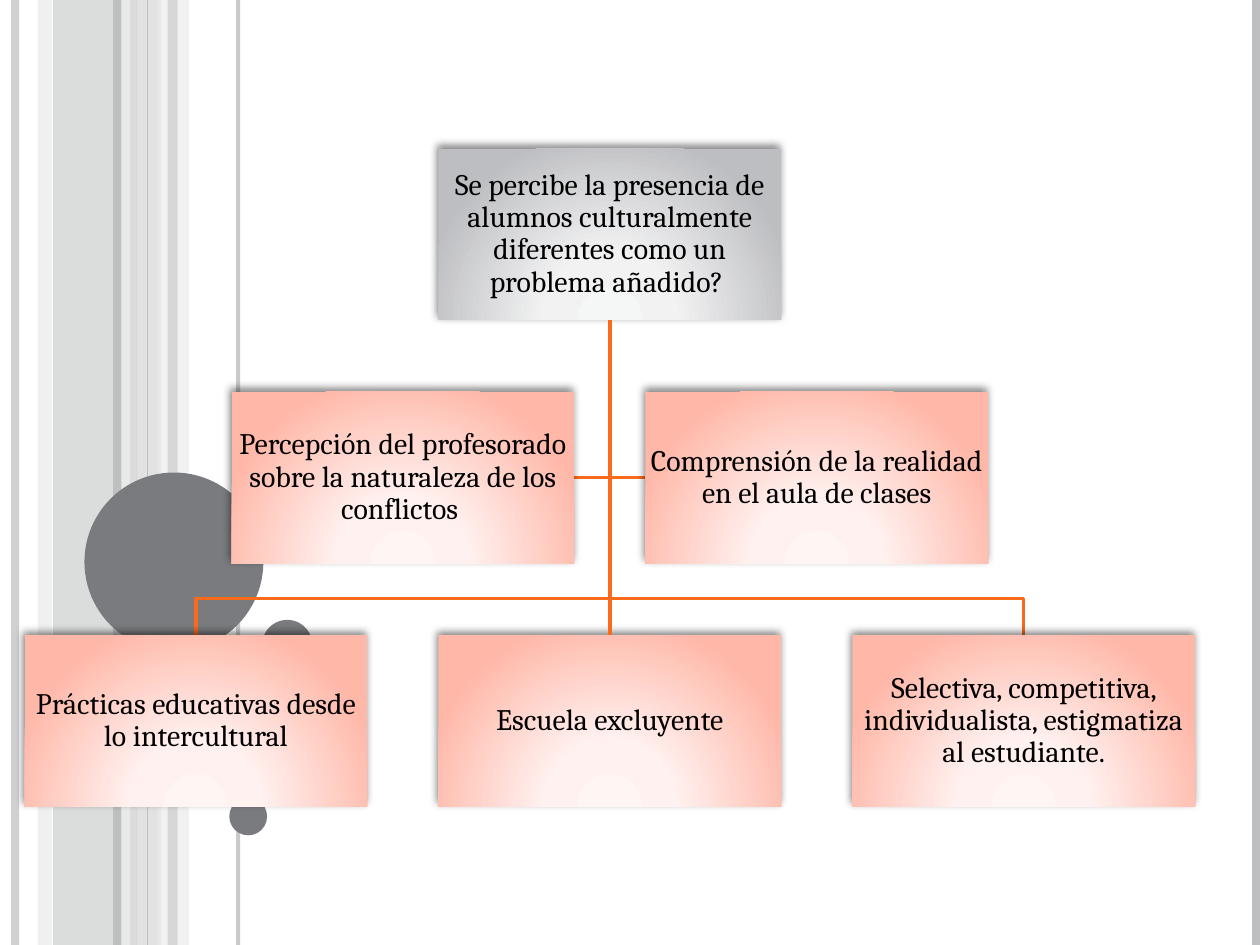
from dataclasses import dataclass
from typing import Any

from lxml.etree import SubElement
from pptx import Presentation
from pptx.dml.color import RGBColor
from pptx.enum.shapes import MSO_CONNECTOR as CONNECTOR, MSO_SHAPE as SHAPE
from pptx.enum.text import MSO_ANCHOR as ANCHOR, PP_ALIGN as ALIGN
from pptx.oxml import parse_xml
from pptx.oxml.ns import nsdecls, qn
from pptx.util import Inches, Pt

BLACK = RGBColor(0x00, 0x00, 0x00)
SILVER = RGBColor(0xBE, 0xBF, 0xC0)
LIGHT = RGBColor(0xD7, 0xD7, 0xD8)
PALE = RGBColor(0xEC, 0xEC, 0xEC)
SLATE = RGBColor(0x79, 0x7B, 0x7E)
ORANGE = RGBColor(0xF9, 0x6A, 0x1B)
# Gradient colours from the centre outwards
GREY_GLOW = (RGBColor(0xF5, 0xF6, 0xF6), RGBColor(0xF2, 0xF2, 0xF3), RGBColor(0xBD, 0xBE, 0xC1))
CORAL_GLOW = (RGBColor(0xFF, 0xF5, 0xF3), RGBColor(0xFF, 0xF1, 0xEF), RGBColor(0xFF, 0xB7, 0xA8))

SLIDE_W, SLIDE_H = 10, 7.5
BOX_W, BOX_H = 2.72, 1.36
CENTER, COLUMN_STEP = 4.84, 3.285
TOP, ROW_STEP = 1.18, 1.93


@dataclass
class ChartSlide:
    slide: Any
    font: str = "Cambria"
    size: float = 17
    branch_width: float = 2

    def set_alpha(self, paint, percent):
        if percent < 100:
            color = next(paint.iter(qn("a:srgbClr")))
            SubElement(color, qn("a:alpha")).set("val", str(percent * 1000))

    def solid(self, kind, left, top, width, height, color, alpha=100):
        shape = self.slide.shapes.add_shape(
            kind, Inches(left), Inches(top), Inches(width), Inches(height))
        shape.shadow.inherit = False
        shape.line.fill.background()
        shape.fill.solid()
        shape.fill.fore_color.rgb = color
        self.set_alpha(shape._element.spPr.find(qn("a:solidFill")), alpha)
        return shape

    def line(self, start, end, color, width, alpha=100):
        line = self.slide.shapes.add_connector(
            CONNECTOR.STRAIGHT, *[Inches(v) for v in (*start, *end)])
        line.line.color.rgb = color
        line.line.width = Pt(width)
        self.set_alpha(line.line._ln, alpha)
        SubElement(line._element.spPr, qn("a:effectLst"))
        return line

    def branch(self, *points):
        start, *rest = [(Inches(x), Inches(y)) for x, y in points]
        builder = self.slide.shapes.build_freeform(*start)
        builder.add_line_segments(rest, close=False)
        branch = builder.convert_to_shape()
        branch.shadow.inherit = False
        branch.fill.background()
        branch.line.color.rgb = ORANGE
        branch.line.width = Pt(self.branch_width)

    def add_glow(self, shape, colors):
        stops = "".join(
            f'<a:gs pos="{pos}"><a:srgbClr val="{color}"/></a:gs>'
            for pos, color in zip((0, 34000, 100000), colors))
        glow = parse_xml(
            f'<a:gradFill {nsdecls("a")} rotWithShape="1"><a:gsLst>{stops}</a:gsLst>'
            '<a:path path="circle"><a:fillToRect l="50000" t="155000" r="50000" b="-55000"/>'
            '</a:path></a:gradFill>')
        properties = shape._element.spPr
        properties.replace(properties.find(qn("a:solidFill")), glow)

    def add_shadow(self, shape):
        shadow = parse_xml(
            f'<a:outerShdw {nsdecls("a")} blurRad="{Pt(5)}" dist="{Pt(2)}" dir="{245 * 60000}"'
            ' rotWithShape="0"><a:srgbClr val="000000"><a:alpha val="50000"/></a:srgbClr>'
            '</a:outerShdw>')
        shape._element.spPr.find(qn("a:effectLst")).append(shadow)

    def box(self, column, row, text, colors):
        box = self.solid(SHAPE.RECTANGLE, CENTER + column * COLUMN_STEP - BOX_W / 2,
                         TOP + row * ROW_STEP, BOX_W, BOX_H, colors[-1])
        self.add_glow(box, colors)
        self.add_shadow(box)
        frame = box.text_frame
        frame.word_wrap = True
        frame.vertical_anchor = ANCHOR.MIDDLE
        frame.margin_left = frame.margin_right = Inches(0.01)
        frame.margin_top = frame.margin_bottom = Inches(0.01)
        frame.text = text
        paragraph = frame.paragraphs[0]
        paragraph.alignment = ALIGN.CENTER
        paragraph.line_spacing = 0.9
        font = paragraph.runs[0].font
        font.name, font.size, font.color.rgb = self.font, Pt(self.size), BLACK
        return box


def main():
    deck = Presentation()
    deck.slide_width, deck.slide_height = Inches(SLIDE_W), Inches(SLIDE_H)
    page = ChartSlide(deck.slides.add_slide(deck.slide_layouts[6]))

    # Background bands: left, width, colour, opacity
    for left, width, color, alpha in (
            (0.42, 0.67, SILVER, 54), (0.3, 0.11, LIGHT, 36),
            (1.08, 0.2, LIGHT, 70), (1.25, 0.25, PALE, 71)):
        page.solid(SHAPE.RECTANGLE, left, 0, width, SLIDE_H, color, alpha)

    # Background lines: x, colour, width, opacity
    for x, color, width, alpha in (
            (0.12, SILVER, 4.5, 73), (1, PALE, 4.5, 83), (0.93, SILVER, 4.5, 100),
            (1.89, SILVER, 2.25, 82), (1.17, SILVER, 0.75, 100), (9.97, SILVER, 4.5, 100)):
        page.line((x, 0), (x, SLIDE_H), color, width, alpha)
    page.solid(SHAPE.RECTANGLE, 1.33, 0, 0.08, SLIDE_H, SILVER, 51)

    # Background circles
    for left, top, diameter in ((0.67, 3.75, 1.42), (1.43, 5.32, 0.7), (1.19, 6.02, 0.15),
                                (1.82, 6.33, 0.3), (2.08, 4.92, 0.4)):
        page.solid(SHAPE.OVAL, left, top, diameter, diameter, SLATE)

    # Branches from the question to the outer boxes
    question_bottom = TOP + BOX_H
    middle_y = TOP + ROW_STEP + BOX_H / 2
    lower_top = TOP + 2 * ROW_STEP
    fork_y = lower_top - 0.29
    for side in (-1, 1):
        inner_x = CENTER + side * (COLUMN_STEP - BOX_W) / 2
        outer_x = CENTER + side * COLUMN_STEP
        page.branch((CENTER, question_bottom), (CENTER, middle_y), (inner_x, middle_y))
        page.branch((CENTER, question_bottom), (CENTER, fork_y),
                    (outer_x, fork_y), (outer_x, lower_top))

    # Boxes
    question = page.box(0, 0, "Se percibe la presencia de alumnos culturalmente "
                              "diferentes como un problema añadido? ", GREY_GLOW)
    page.box(-1, 2, "Prácticas educativas desde lo intercultural", CORAL_GLOW)
    school = page.box(0, 2, "Escuela excluyente", CORAL_GLOW)
    page.box(1, 2, "Selectiva, competitiva, individualista, estigmatiza al estudiante.",
             CORAL_GLOW)
    page.box(-0.5, 1, "Percepción del profesorado sobre la naturaleza de los conflictos ",
             CORAL_GLOW)
    page.box(0.5, 1, "Comprensión de la realidad en el aula de clases", CORAL_GLOW)

    # Central trunk
    trunk = page.line((CENTER, question_bottom), (CENTER, lower_top), ORANGE, page.branch_width)
    trunk.begin_connect(question, 2)
    trunk.end_connect(school, 0)

    deck.save("out.pptx")


if __name__ == "__main__":
    main()
